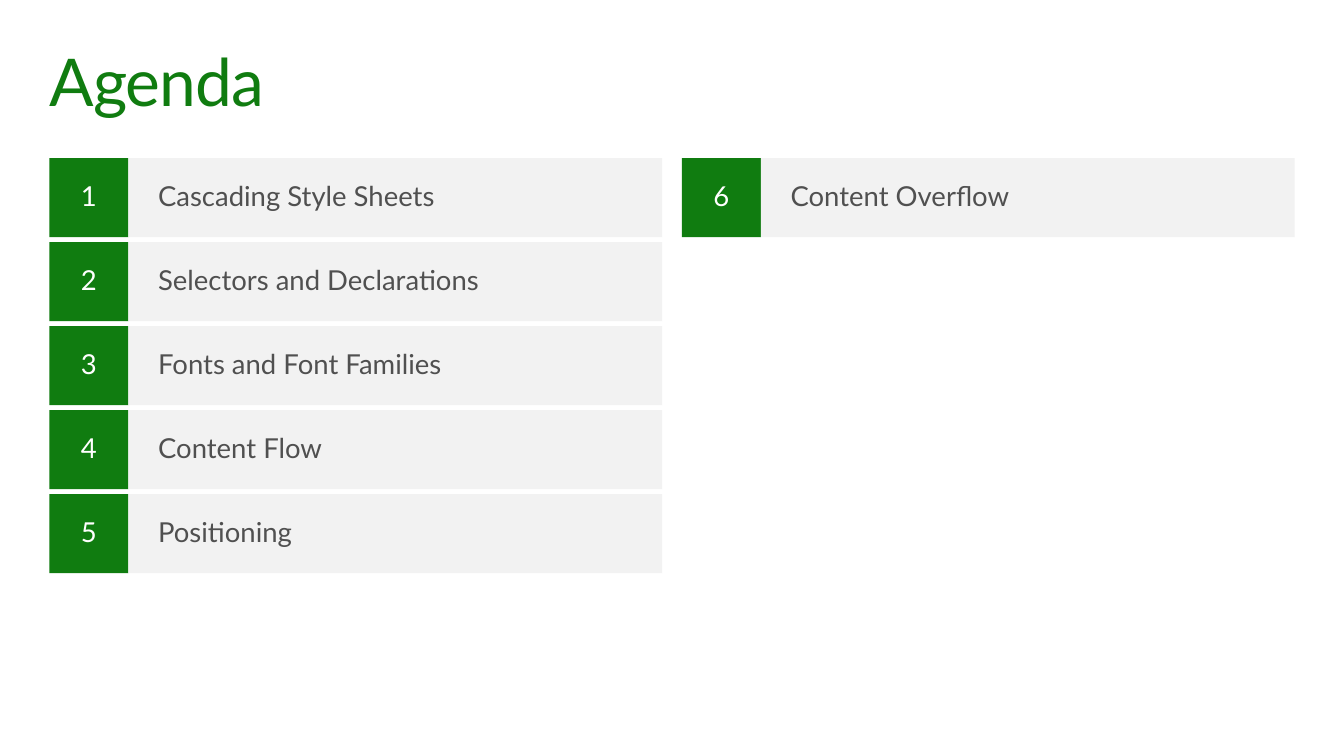
from pptx import Presentation
from pptx.dml.color import RGBColor
from pptx.enum.shapes import MSO_SHAPE
from pptx.enum.text import MSO_ANCHOR, MSO_AUTO_SIZE, PP_ALIGN
from pptx.util import Pt

GREEN = "107C10"
PALE_GRAY = "F2F2F2"
DARK_GRAY = "505050"
WHITE = "FFFFFF"

TOPICS = [
    "Cascading Style Sheets",
    "Selectors and Declarations",
    "Fonts and Font Families",
    "Content Flow",
    "Positioning",
    "Content Overflow",
]
ROWS = 5
GRID_LEFT, GRID_TOP = 36, 115.2
COLUMN_STEP, ROW_STEP = 460.8, 61.2
TILE, BAR_WIDTH = 57.6, 388.8


def color(code):
    return RGBColor.from_string(code)


def format_text(box, size, ink, align, anchor, side, edge):
    frame = box.text_frame
    frame.word_wrap = True
    frame.auto_size = MSO_AUTO_SIZE.NONE
    frame.vertical_anchor = anchor
    frame.margin_left = frame.margin_right = Pt(side)
    frame.margin_top = frame.margin_bottom = Pt(edge)
    para = frame.paragraphs[0]
    para.alignment = align
    para.line_spacing = 0.9
    span = para.runs[0]
    span.font.name = "Lato"
    span.font.size = Pt(size)
    span.font.color.rgb = color(ink)
    return span


def add_title(page, text):
    title = page.shapes.title
    title.left, title.top = Pt(28.8), Pt(28.8)
    title.width, title.height = Pt(921.6), Pt(72)
    title.text_frame.text = text
    span = format_text(title, 48, GREEN, PP_ALIGN.LEFT, MSO_ANCHOR.TOP, 7.2, 7.2)
    span._r.get_or_add_rPr().set("spc", "-70")


def add_block(group, left, top, width, fill, text, ink, align, side, edge):
    block = group.shapes.add_shape(
        MSO_SHAPE.RECTANGLE, Pt(left), Pt(top), Pt(width), Pt(TILE)
    )
    block.shadow.inherit = False
    block.fill.solid()
    block.fill.fore_color.rgb = color(fill)
    block.line.fill.background()
    block.text_frame.text = text
    format_text(block, 20, ink, align, MSO_ANCHOR.MIDDLE, side, edge)


def add_topic(page, index, topic):
    column, row = divmod(index, ROWS)
    left = GRID_LEFT + column * COLUMN_STEP
    top = GRID_TOP + row * ROW_STEP
    group = page.shapes.add_group_shape()
    add_block(group, left, top, TILE, GREEN, str(index + 1), WHITE,
              PP_ALIGN.CENTER, 14.4, 11.52)
    add_block(group, left + TILE, top, BAR_WIDTH, PALE_GRAY, topic, DARK_GRAY,
              PP_ALIGN.LEFT, 21.6, 7.2)


def main():
    deck = Presentation()
    deck.slide_width, deck.slide_height = Pt(979.2), Pt(550.8)
    page = deck.slides.add_slide(deck.slide_layouts[5])
    page.background.fill.solid()
    page.background.fill.fore_color.rgb = color(WHITE)
    add_title(page, "Agenda")
    for index, topic in enumerate(TOPICS):
        add_topic(page, index, topic)
    deck.save("out.pptx")


if __name__ == "__main__":
    main()
